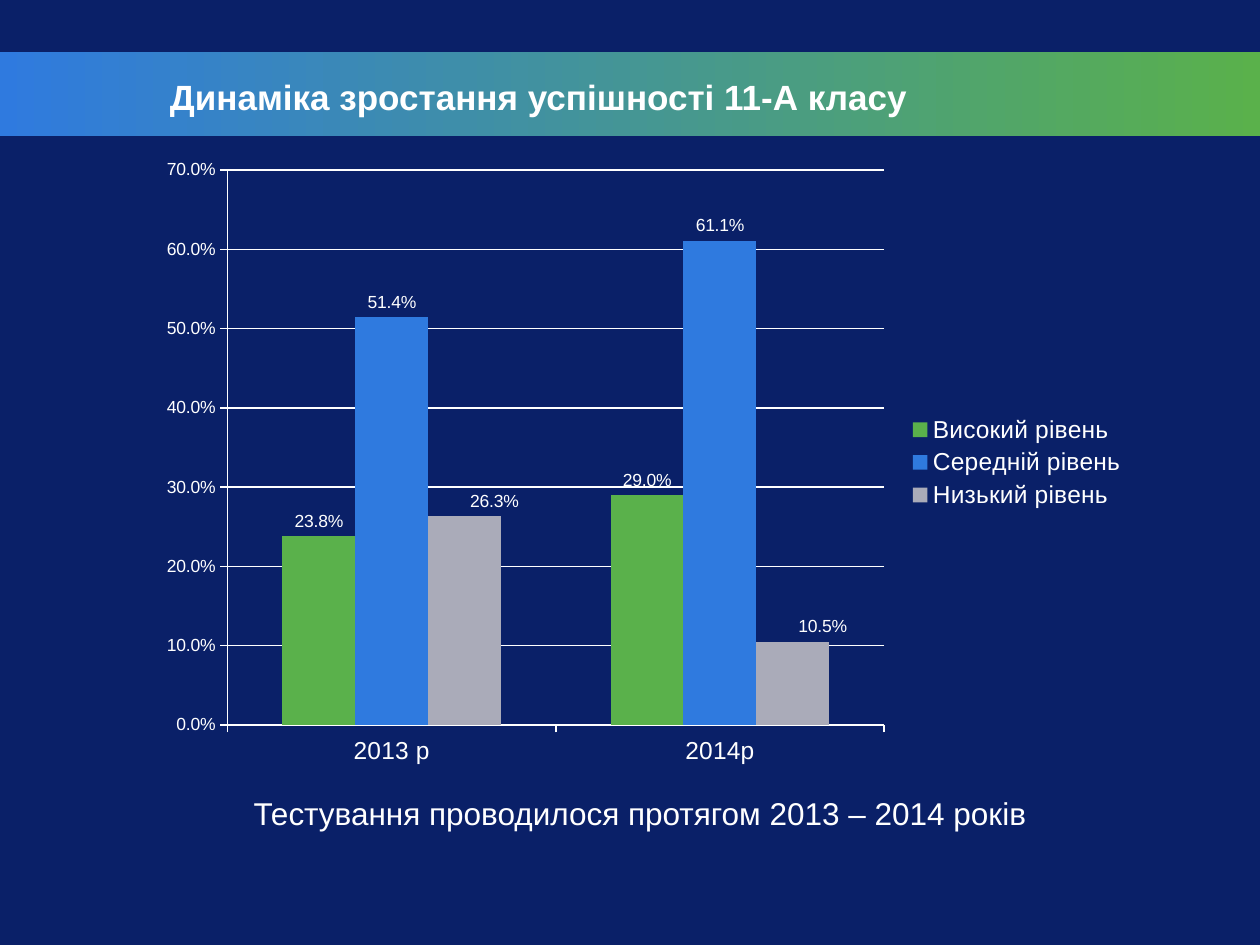
from dataclasses import dataclass

import lxml.etree
import pptx
import pptx.chart.data
import pptx.dml.color
import pptx.enum.chart
import pptx.enum.shapes
import pptx.enum.text
import pptx.oxml.ns
import pptx.util

Pt = pptx.util.Pt
qn = pptx.oxml.ns.qn
NAVY, BLUE, GREEN, GREY, WHITE = "0A2068", "2F7ADF", "5AB14B", "AAABB9", "FFFFFF"
PERCENT = "0.0%"


@dataclass
class Level:
    name: str
    shares: tuple[float, ...]
    color: str
    label_shift: float = 0


YEARS = ("2013 р", "2014р")
LEVELS = (
    Level("Високий рівень", (0.238, 0.29), GREEN),
    Level("Середній рівень", (0.514, 0.611), BLUE),
    Level("Низький рівень", (0.263, 0.105), GREY, label_shift=0.03),
)


def rgb(color: str) -> pptx.dml.color.RGBColor:
    return pptx.dml.color.RGBColor.from_string(color)


def format_font(font, size: float, color: str = WHITE, bold: bool = False) -> None:
    font.name = "Arial"
    font.size = Pt(size)
    font.bold = bold
    font.color.rgb = rgb(color)


def add_text(page, text: str, *, left: float, top: float, width: float, height: float,
             size: float, bold: bool = False,
             align=pptx.enum.text.PP_ALIGN.LEFT) -> None:
    box = page.shapes.add_textbox(Pt(left), Pt(top), Pt(width), Pt(height))
    box.text_frame.word_wrap = True
    box.text_frame.auto_size = pptx.enum.text.MSO_AUTO_SIZE.SHAPE_TO_FIT_TEXT
    para = box.text_frame.paragraphs[0]
    para.alignment = align
    span = para.add_run()
    span.text = text
    format_font(span.font, size, bold=bold)


def add_banner(page) -> None:
    banner = page.shapes.add_shape(
        pptx.enum.shapes.MSO_SHAPE.RECTANGLE, 0, Pt(30), Pt(720), Pt(48))
    banner.shadow.inherit = False
    banner.line.fill.background()
    banner.fill.gradient()
    banner.fill.gradient_angle = 0
    for stop, color in zip(banner.fill.gradient_stops, (BLUE, GREEN)):
        stop.color.rgb = rgb(color)


def insert_layout(parent, index: int, **settings) -> None:
    """Give a chart part a manual layout, in fractions of the chart's size."""
    for old in parent.findall(qn("c:layout")):
        parent.remove(old)
    layout = lxml.etree.Element(qn("c:layout"))
    parent.insert(index, layout)
    manual = lxml.etree.SubElement(layout, qn("c:manualLayout"))
    for name, value in settings.items():
        lxml.etree.SubElement(manual, qn(f"c:{name}")).set("val", str(value))


def style_line(line) -> None:
    line.color.rgb = rgb(WHITE)
    line.width = Pt(0.75)


def style_axis(axis, size: float) -> None:
    axis.major_tick_mark = pptx.enum.chart.XL_TICK_MARK.OUTSIDE
    axis.minor_tick_mark = pptx.enum.chart.XL_TICK_MARK.NONE
    format_font(axis.tick_labels.font, size)
    style_line(axis.format.line)


def style_labels(series, level: Level) -> None:
    outside = pptx.enum.chart.XL_LABEL_POSITION.OUTSIDE_END
    labels = series.data_labels
    labels.show_value = True
    labels.number_format = PERCENT
    labels.number_format_is_linked = False
    labels.position = outside
    format_font(labels.font, 10)
    if not level.label_shift:
        return
    for index in range(len(level.shares)):
        label = series.points[index].data_label
        label.position = outside
        format_font(label.font, 10)
    for element in series._element.xpath("c:dLbls/c:dLbl"):
        insert_layout(element, 1, x=level.label_shift, y=0)
        number_format = lxml.etree.Element(qn("c:numFmt"))
        number_format.set("formatCode", PERCENT)
        number_format.set("sourceLinked", "0")
        element.insert(2, number_format)


def add_level_chart(page) -> None:
    data = pptx.chart.data.CategoryChartData(number_format=PERCENT)
    data.categories = YEARS
    for level in LEVELS:
        data.add_series(level.name, level.shares)
    chart = page.shapes.add_chart(
        pptx.enum.chart.XL_CHART_TYPE.COLUMN_CLUSTERED,
        Pt(84.24), Pt(84.24), Pt(566.64), Pt(360), data).chart
    chart.has_title = False
    format_font(chart.font, 10)
    chart.has_legend = True
    chart.legend.position = pptx.enum.chart.XL_LEGEND_POSITION.RIGHT
    chart.legend.include_in_layout = False
    format_font(chart.legend.font, 14)

    style_axis(chart.category_axis, 14)
    values = chart.value_axis
    style_axis(values, 10)
    values.minimum_scale, values.maximum_scale, values.major_unit = 0, 0.7, 0.1
    values.tick_labels.number_format = PERCENT
    values.tick_labels.number_format_is_linked = False
    values.has_major_gridlines = True
    style_line(values.major_gridlines.format.line)

    plot = chart.plots[0]
    plot.gap_width, plot.overlap, plot.vary_by_categories = 150, 0, False
    for series, level in zip(plot.series, LEVELS):
        series.format.fill.solid()
        series.format.fill.fore_color.rgb = rgb(level.color)
        series.invert_if_negative = False
        style_labels(series, level)
    plot_area = chart._chartSpace.xpath("c:chart/c:plotArea")[0]
    insert_layout(plot_area, 0, layoutTarget="inner", xMode="edge", yMode="edge",
                  x=0.081, y=0.036, w=0.662, h=0.881)


def main() -> None:
    deck = pptx.Presentation()
    deck.slide_width, deck.slide_height = Pt(720), Pt(540)
    page = deck.slides.add_slide(deck.slide_layouts[6])
    page.background.fill.solid()
    page.background.fill.fore_color.rgb = rgb(NAVY)
    add_banner(page)
    add_level_chart(page)
    add_text(page, "Тестування проводилося протягом 2013 – 2014 років",
             left=11.5, top=450, width=708.5, height=29, size=18,
             align=pptx.enum.text.PP_ALIGN.CENTER)
    add_text(page, "Динаміка зростання успішності 11-А класу",
             left=90, top=39.6, width=450, height=31.5, size=20, bold=True)
    deck.save("out.pptx")


if __name__ == "__main__":
    main()
